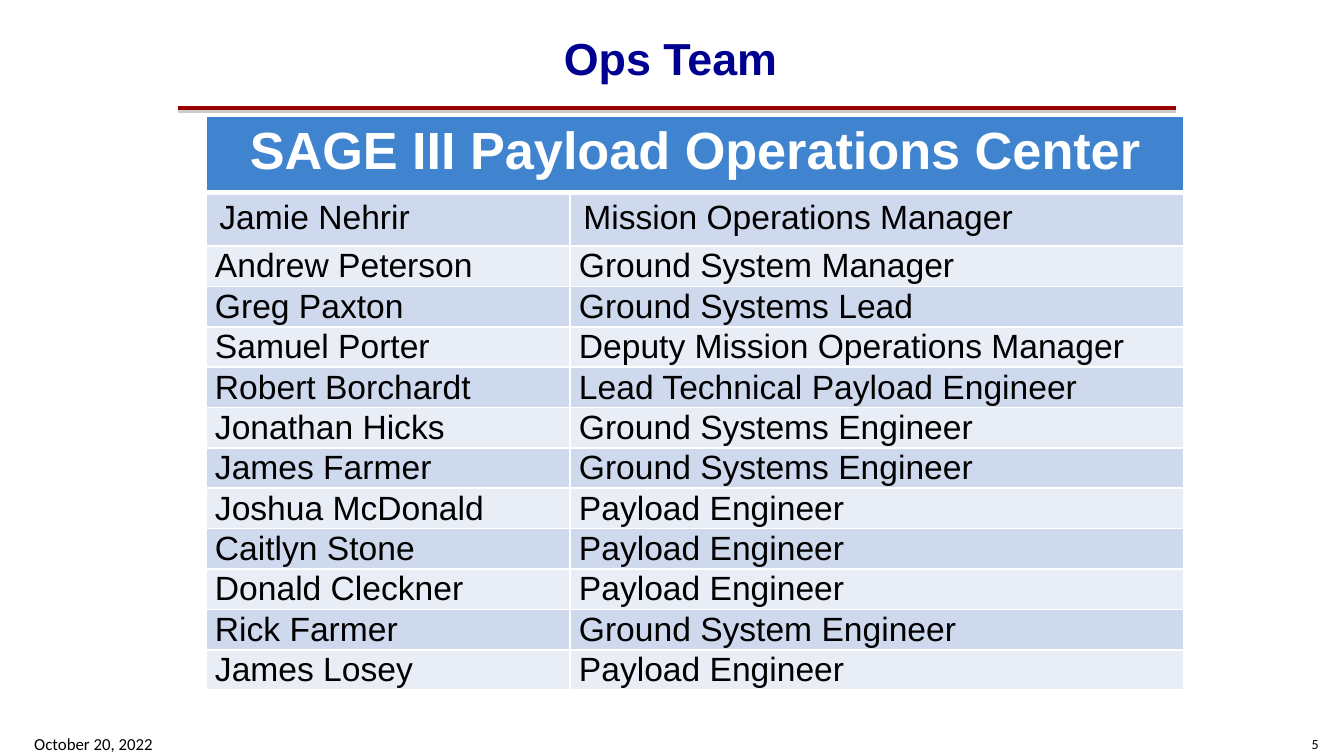
from lxml import etree
from pptx import Presentation
from pptx.dml.color import RGBColor
from pptx.enum.shapes import MSO_CONNECTOR
from pptx.enum.text import MSO_ANCHOR, PP_ALIGN
from pptx.oxml import parse_xml
from pptx.oxml.ns import nsdecls, qn
from pptx.util import Pt

SCALE = 914400 / 134.4
TITLE_ONLY = 5
LEFT, CENTER, RIGHT = PP_ALIGN.LEFT, PP_ALIGN.CENTER, PP_ALIGN.RIGHT
TOP, MIDDLE = MSO_ANCHOR.TOP, MSO_ANCHOR.MIDDLE
STRAIGHT = MSO_CONNECTOR.STRAIGHT
COLORS = {
    "title": "000090", "rule": "990000", "shadow": "808080",
    "header": "4083CF", "dark band": "CFD9ED", "light band": "E8EDF6",
    "white": "FFFFFF", "black": "000000",
}
TEAM_TITLE = "SAGE III Payload Operations Center"
TEAM = [
    ("Jamie Nehrir", "Mission Operations Manager"),
    ("Andrew Peterson", "Ground System Manager"),
    ("Greg Paxton", "Ground Systems Lead"),
    ("Samuel Porter", "Deputy Mission Operations Manager"),
    ("Robert Borchardt", "Lead Technical Payload Engineer"),
    ("Jonathan Hicks", "Ground Systems Engineer"),
    ("James Farmer", "Ground Systems Engineer"),
    ("Joshua McDonald", "Payload Engineer"),
    ("Caitlyn Stone", "Payload Engineer"),
    ("Donald Cleckner", "Payload Engineer"),
    ("Rick Farmer", "Ground System Engineer"),
    ("James Losey", "Payload Engineer"),
]


def px(length):
    """Turn pixels into EMU."""
    return round(length * SCALE)


def color(name):
    """Look up a named colour."""
    return RGBColor.from_string(COLORS[name])


class SlideBuilder:
    """Holds the style and the current slide."""

    def __init__(self, slide, font="Arial", small_font="Calibri"):
        """Keep the slide and its fonts."""
        self.slide = slide
        self.font = font
        self.small_font = small_font

    def add_text(self, frame, text, size, color_name="black", align=LEFT, bold=False, font=None):
        """Add one formatted run to a text frame."""
        paragraph = frame.paragraphs[0]
        paragraph.alignment = align
        run = paragraph.add_run()
        run.text = text
        run.font.name = font or self.font
        run.font.size = Pt(size)
        run.font.bold = bold
        run.font.color.rgb = color(color_name)

    def title(self, text, left, top, width, height):
        """Place and format the title."""
        shape = self.slide.shapes.title
        shape.left, shape.top = px(left), px(top)
        shape.width, shape.height = px(width), px(height)
        shape.text_frame.vertical_anchor = MIDDLE
        self.add_text(shape.text_frame, text, 24, "title", CENTER, True)

    def rule(self, left, right, y):
        """Draw a horizontal rule with a hard shadow."""
        line = self.slide.shapes.add_connector(STRAIGHT, px(left), px(y), px(right), px(y))
        line.line.color.rgb = color("rule")
        line.line.width = Pt(2)
        line._element.spPr.append(parse_xml(
            f'<a:effectLst {nsdecls("a")}>'
            f'<a:outerShdw blurRad="0" dist="{Pt(1.6)}" dir="5400000" rotWithShape="0">'
            f'<a:srgbClr val="{COLORS["shadow"]}"><a:alpha val="38000"/></a:srgbClr>'
            '</a:outerShdw></a:effectLst>'))

    def footer(self, text, left, size, align):
        """Add a small text at the foot of the slide."""
        shape = self.slide.shapes.add_textbox(px(left), px(731), px(313), px(26))
        frame = shape.text_frame
        frame.word_wrap = True
        frame.vertical_anchor = MIDDLE
        frame.margin_top = frame.margin_bottom = 0
        self.add_text(frame, text, size, align=align, font=self.small_font)

    def borders(self, cell, top=1, bottom=1):
        """Give a cell white borders."""
        properties = cell._tc.get_or_add_tcPr()
        for tag, width in (("a:lnL", 1), ("a:lnR", 1), ("a:lnT", top), ("a:lnB", bottom)):
            border = etree.SubElement(properties, qn(tag), w=str(Pt(width)))
            fill = etree.SubElement(border, qn("a:solidFill"))
            etree.SubElement(fill, qn("a:srgbClr"), val=COLORS["white"])

    def fill(self, cell, color_name):
        """Fill a cell with a plain colour."""
        cell.fill.solid()
        cell.fill.fore_color.rgb = color(color_name)

    def team_table(self, heading, members, left, top, columns, heights):
        """Add the banded team table below a merged heading."""
        frame = self.slide.shapes.add_table(
            len(members) + 1, len(columns), px(left), px(top), px(sum(columns)), px(sum(heights)))
        table = frame.table
        for column, width in zip(table.columns, columns):
            column.width = px(width)
        for row, height in zip(table.rows, heights):
            row.height = px(height)
        for cell in table.rows[0].cells:
            self.borders(cell, bottom=3)
            self.fill(cell, "header")
        table.cell(0, 0).merge(table.cell(0, len(columns) - 1))
        self.add_text(table.cell(0, 0).text_frame, heading, 28, "white", CENTER, True)
        for index, member in enumerate(members, 1):
            first = index == 1
            for cell, text in zip(table.rows[index].cells, member):
                self.borders(cell, top=3 if first else 1)
                self.fill(cell, "dark band" if index % 2 else "light band")
                cell.vertical_anchor = TOP if first else MIDDLE
                if not first:
                    cell.margin_left = cell.margin_right = px(9)
                    cell.margin_top = cell.margin_bottom = 0
                self.add_text(cell.text_frame, text, 18)


def main():
    """Build the team slide."""
    presentation = Presentation()
    presentation.slide_width, presentation.slide_height = px(1344), px(756)
    slide = presentation.slides.add_slide(presentation.slide_layouts[TITLE_ONLY])
    builder = SlideBuilder(slide)
    builder.rule(178, 1176, 108)
    builder.footer("5", 1019, 7.5, RIGHT)
    builder.title("Ops Team", 180, 22, 981, 71)
    builder.footer("October 20, 2022", 21, 9, LEFT)
    builder.team_table(TEAM_TITLE, TEAM, 206, 116, [364, 614], [65, 50] + [40] * 11)
    presentation.save("out.pptx")


if __name__ == "__main__":
    main()
